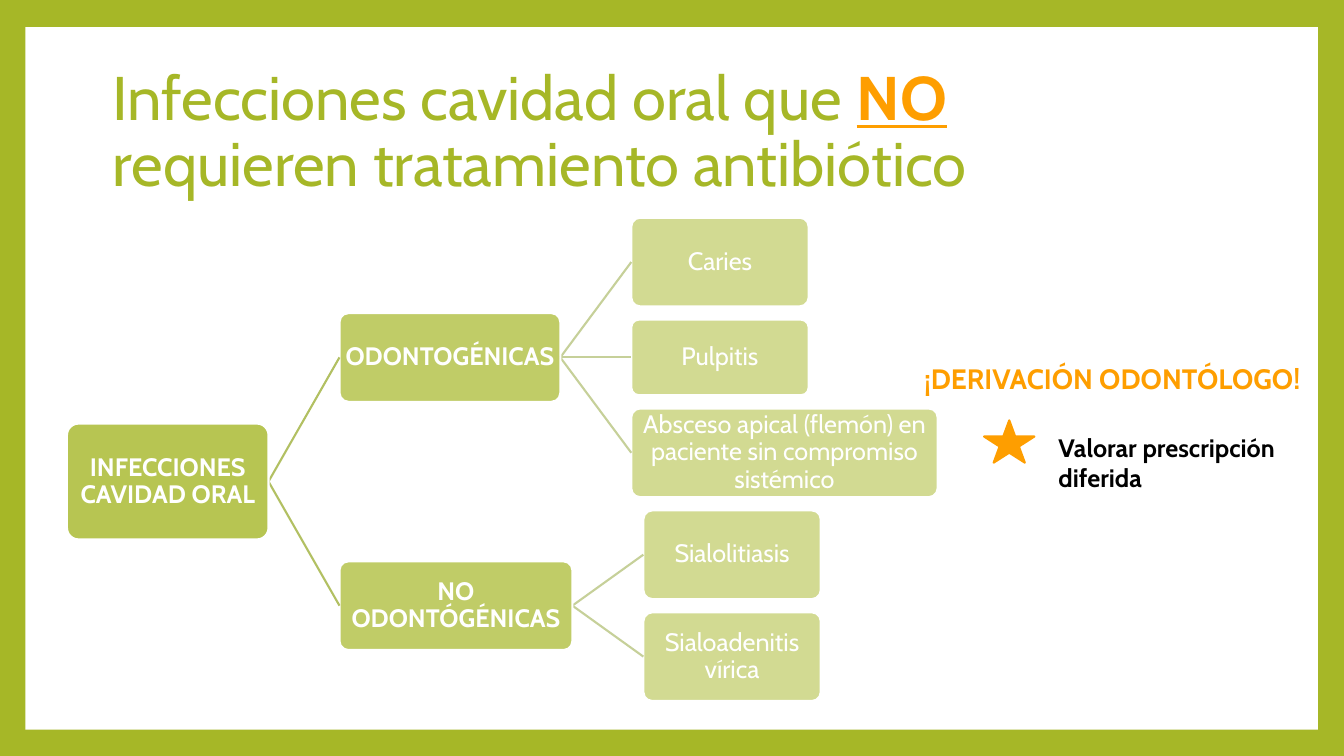
from dataclasses import dataclass, field

from lxml.etree import SubElement
from pptx import Presentation
from pptx.dml.color import RGBColor
from pptx.enum.shapes import MSO_CONNECTOR, MSO_SHAPE
from pptx.enum.text import MSO_ANCHOR, MSO_AUTO_SIZE, PP_ALIGN
from pptx.oxml.ns import qn
from pptx.shapes.autoshape import Shape
from pptx.slide import Slide
from pptx.text.text import TextFrame, _Run
from pptx.util import Inches, Length, Pt

WIDTH, HEIGHT = Inches(13.33), Inches(7.5)
FONT = "Cabin"
GREEN, ORANGE, WHITE, BLACK = "A6B727", "FE9E00", "FFFFFF", "000000"

# All places and sizes are percentages of the slide's width or height.
TREE_LEFT, TREE_TOP = 4.98, 28.8
LEVEL_GAP, LEAF_GAP = 5.28, 1.75
LEVEL_OPACITY = (80, 70, 50)
LEVEL_LINE = ("B2C062", "C6D099")


@dataclass(frozen=True)
class Area:
    left: float
    top: float
    width: float
    height: float

    def placed(self) -> tuple[Length, Length, Length, Length]:
        return across(self.left), down(self.top), across(self.width), down(self.height)


@dataclass(frozen=True)
class Node:
    label: str
    width: float
    height: float = 11.73
    children: list["Node"] = field(default_factory=list)


@dataclass(frozen=True)
class Note:
    label: str
    area: Area
    size: int
    colour: str


TREE = Node("INFECCIONES CAVIDAD ORAL", 15, 15.33, [
    Node("ODONTOGÉNICAS", 16.43, children=[
        Node("Caries", 13.2),
        Node("Pulpitis", 13.2, 10),
        Node("Absceso apical (flemón) en paciente sin compromiso sistémico", 22.8),
    ]),
    Node("NO ODONTÓGÉNICAS", 17.33, children=[
        Node("Sialolitiasis", 13.2),
        Node("Sialoadenitis vírica", 13.2),
    ]),
])
NOTES = [
    Note("Valorar prescripción diferida", Area(78.02, 56.53, 19.35, 9.47), 18, BLACK),
    Note("¡DERIVACIÓN ODONTÓLOGO!", Area(68.04, 47.2, 35.86, 5.87), 20, ORANGE),
]


def across(percent: float) -> Length:
    return Length(round(WIDTH * percent / 100))


def down(percent: float) -> Length:
    return Length(round(HEIGHT * percent / 100))


def colour_of(code: str) -> RGBColor:
    return RGBColor.from_string(code)


def format_span(span: _Run, size: int, colour: str, bold: bool = False) -> None:
    span.font.name = FONT
    span.font.size = Pt(size)
    span.font.bold = bold
    span.font.color.rgb = colour_of(colour)


def set_insets(frame: TextFrame, inset: Length) -> None:
    frame.margin_left = frame.margin_right = inset
    frame.margin_top = frame.margin_bottom = inset


def add_filled(page: Slide, kind: MSO_SHAPE, area: Area, fill: str,
               line: str | None = None, opacity: int = 100) -> Shape:
    shape = page.shapes.add_shape(kind, *area.placed())
    shape.shadow.inherit = False
    shape.fill.solid()
    shape.fill.fore_color.rgb = colour_of(fill)
    if opacity < 100:
        code = shape._element.spPr.find(qn("a:solidFill")).find(qn("a:srgbClr"))
        SubElement(code, qn("a:alpha")).set("val", str(opacity * 1000))
    if line:
        shape.line.color.rgb = colour_of(line)
        shape.line.width = Pt(1.5)
    else:
        shape.line.fill.background()
    return shape


def add_title(page: Slide) -> None:
    title = page.shapes.title
    title.left, title.top, title.width, title.height = Area(7.62, 7.77, 81.02, 19.73).placed()
    frame = title.text_frame
    frame.word_wrap = True
    frame.auto_size = MSO_AUTO_SIZE.NONE
    frame.vertical_anchor = MSO_ANCHOR.MIDDLE
    para = frame.paragraphs[0]
    para.alignment = PP_ALIGN.LEFT
    para.line_spacing = 0.9
    for words in ("Infecciones cavidad oral que ", "NO", " requieren tratamiento antibiótico"):
        span = para.add_run()
        span.text = words
        stressed = words == "NO"
        format_span(span, 44, ORANGE if stressed else GREEN, stressed)
        span.font.underline = stressed


def add_branch(page: Slide, start: tuple[float, float], end: tuple[float, float],
               colour: str) -> None:
    branch = page.shapes.add_connector(MSO_CONNECTOR.STRAIGHT, across(start[0]), down(start[1]),
                                       across(end[0]), down(end[1]))
    branch.line.color.rgb = colour_of(colour)
    branch.line.width = Pt(1.5)
    SubElement(branch._element.spPr, qn("a:effectLst"))


def add_node(page: Slide, node: Node, area: Area, level: int) -> None:
    box = add_filled(page, MSO_SHAPE.ROUNDED_RECTANGLE, area, GREEN, WHITE, LEVEL_OPACITY[level])
    box.adjustments[0] = 0.1
    frame = box.text_frame
    frame.text = node.label
    frame.word_wrap = True
    frame.vertical_anchor = MSO_ANCHOR.MIDDLE
    set_insets(frame, Inches(0.01))
    para = frame.paragraphs[0]
    para.alignment = PP_ALIGN.CENTER
    para.line_spacing = 0.9
    format_span(para.runs[0], 18, WHITE, bold=bool(node.children))


def draw_tree(page: Slide, node: Node, left: float, top: float,
              level: int = 0) -> tuple[float, float]:
    """Draw a node centred on its children; return its middle and the bottom of its leaves."""
    right = left + node.width
    middles: list[float] = []
    bottom = top + node.height
    next_top = top
    for child in node.children:
        middle, bottom = draw_tree(page, child, right + LEVEL_GAP, next_top, level + 1)
        middles.append(middle)
        next_top = bottom + LEAF_GAP
    centre = (middles[0] + middles[-1]) / 2 if middles else top + node.height / 2
    for middle in middles:
        add_branch(page, (right, centre), (right + LEVEL_GAP, middle), LEVEL_LINE[level])
    add_node(page, node, Area(left, centre - node.height / 2, node.width, node.height), level)
    return centre, bottom


def add_note(page: Slide, note: Note) -> None:
    frame = page.shapes.add_textbox(*note.area.placed()).text_frame
    frame.text = note.label
    frame.word_wrap = True
    format_span(frame.paragraphs[0].runs[0], note.size, note.colour, bold=True)


def main() -> None:
    deck = Presentation()
    deck.slide_width, deck.slide_height = WIDTH, HEIGHT
    page = deck.slides.add_slide(deck.slide_layouts[5])
    page.background.fill.solid()
    page.background.fill.fore_color.rgb = colour_of(GREEN)
    panel = add_filled(page, MSO_SHAPE.RECTANGLE, Area(1.88, 3.6, 96.17, 92.93), WHITE)
    page.shapes.title._element.addprevious(panel._element)
    add_title(page)
    draw_tree(page, TREE, TREE_LEFT, TREE_TOP)
    add_filled(page, MSO_SHAPE.STAR_5_POINT, Area(73.22, 55.6, 3.75, 5.6), ORANGE, ORANGE)
    for note in NOTES:
        add_note(page, note)
    deck.save("out.pptx")


if __name__ == "__main__":
    main()
